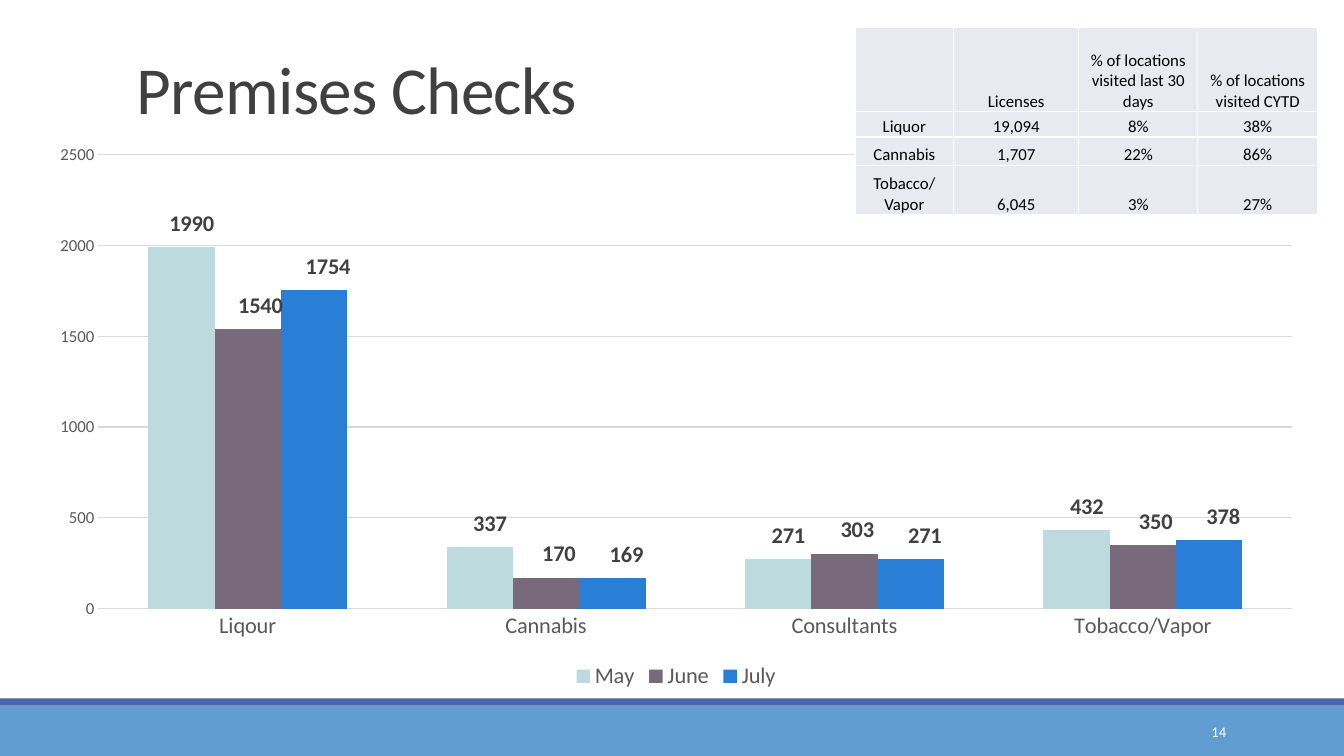
from dataclasses import dataclass
from typing import Any

from lxml.etree import SubElement, Element
from pptx import Presentation
from pptx.chart.data import CategoryChartData
from pptx.dml.color import RGBColor
from pptx.enum.chart import XL_CHART_TYPE as ChartType
from pptx.enum.chart import XL_LABEL_POSITION as LabelPosition
from pptx.enum.chart import XL_LEGEND_POSITION as LegendPosition
from pptx.enum.chart import XL_TICK_MARK as TickMark
from pptx.enum.shapes import MSO_SHAPE as Preset
from pptx.enum.text import MSO_ANCHOR as Anchor
from pptx.enum.text import PP_ALIGN as Align
from pptx.oxml.ns import qn
from pptx.util import Inches, Pt

FONT = "Calibri"
WHITE = RGBColor(0xFF, 0xFF, 0xFF)
BLACK = RGBColor(0x00, 0x00, 0x00)
DARK_GRAY = RGBColor(0x40, 0x40, 0x40)
MID_GRAY = RGBColor(0x59, 0x59, 0x59)
GRID_GRAY = RGBColor(0xD9, 0xD9, 0xD9)
FOOTER_BLUE = RGBColor(0x62, 0x9D, 0xD1)
STRIPE_BLUE = RGBColor(0x4A, 0x66, 0xAC)
CELL_FILL = RGBColor(0xE9, 0xEA, 0xF1)


@dataclass
class Area:
    left: float
    top: float
    width: float
    height: float

    def lengths(self) -> list[int]:
        return [Inches(n) for n in (self.left, self.top, self.width, self.height)]


@dataclass
class Band:
    area: Area
    color: RGBColor


@dataclass
class Label:
    text: str
    area: Area
    size: float
    color: RGBColor
    align: Align
    anchor: Anchor
    line_spacing: float = 1.0
    tracking: int = 0


@dataclass
class Month:
    name: str
    checks: tuple[int, ...]
    color: RGBColor
    label_shift: float


BANDS = [
    Band(Area(0, 7, 13.33, 0.5), FOOTER_BLUE),
    Band(Area(0, 6.93, 13.33, 0.07), STRIPE_BLUE),
]
TITLE = Label("Premises Checks", Area(1.26, 0.35, 11, 0.97), 48, DARK_GRAY,
              Align.LEFT, Anchor.BOTTOM, 0.85, -50)
PAGE_NUMBER = Label("14", Area(10.83, 7.06, 1.43, 0.4), 10.5, WHITE,
                    Align.RIGHT, Anchor.MIDDLE)
CATEGORIES = ["Liqour", "Cannabis", "Consultants", "Tobacco/Vapor"]
MONTHS = [
    Month("May", (1990, 337, 271, 432), RGBColor(0xBD, 0xDA, 0xDF), 0.008),
    Month("June", (1540, 170, 303, 350), RGBColor(0x78, 0x69, 0x7B), 0.01),
    Month("July", (1754, 169, 271, 378), RGBColor(0x29, 0x7F, 0xD5), 0.011),
]
LABEL_RISE = -0.01
LICENSE_ROWS = [
    ["", "Licenses", "% of locations visited last 30 days", "% of locations visited CYTD"],
    ["Liquor", "19,094", "8%", "38%"],
    ["Cannabis", "1,707", "22%", "86%"],
    ["Tobacco/\nVapor", "6,045", "3%", "27%"],
]
COLUMN_WIDTHS = [0.98, 1.24, 1.18, 1.19]
ROW_HEIGHTS = [0.84, 0.25, 0.28, 0.49]


def set_font(font: Any, size: float, color: RGBColor, bold: bool = False) -> None:
    for name, value in {"name": FONT, "size": Pt(size), "bold": bold}.items():
        setattr(font, name, value)
    font.color.rgb = color


def add_band(page: Any, band: Band) -> None:
    shape = page.shapes.add_shape(Preset.RECTANGLE, *band.area.lengths())
    shape.shadow.inherit = False
    shape.fill.solid()
    shape.fill.fore_color.rgb = band.color
    shape.line.fill.background()


def add_label(page: Any, label: Label) -> None:
    frame = page.shapes.add_textbox(*label.area.lengths()).text_frame
    frame.word_wrap = True
    frame.vertical_anchor = label.anchor
    para = frame.paragraphs[0]
    para.alignment = label.align
    para.line_spacing = label.line_spacing
    span = para.add_run()
    span.text = label.text
    set_font(span.font, label.size, label.color)
    if label.tracking:
        span.font._element.set("spc", str(label.tracking))


def manual_layout(**values: Any) -> Any:
    layout = Element(qn("c:layout"))
    manual = SubElement(layout, qn("c:manualLayout"))
    for name, value in values.items():
        SubElement(manual, qn(f"c:{name}")).set("val", str(value))
    return layout


def style_series(series: Any, month: Month) -> None:
    series.format.fill.solid()
    series.format.fill.fore_color.rgb = month.color
    for index in range(len(month.checks)):
        label = series.points[index].data_label
        set_font(label.font, 16, DARK_GRAY, bold=True)
        label.position = LabelPosition.OUTSIDE_END
    for element in series._element.iter(qn("c:dLbl")):
        element.insert(1, manual_layout(x=month.label_shift, y=LABEL_RISE))


def add_checks_chart(page: Any) -> None:
    data = CategoryChartData()
    data.categories = CATEGORIES
    for month in MONTHS:
        data.add_series(month.name, month.checks)
    chart = page.shapes.add_chart(
        ChartType.COLUMN_CLUSTERED, *Area(0.34, 1.33, 12.73, 5.56).lengths(), data).chart
    set_font(chart.font, 10, BLACK)
    chart.has_title = False
    chart.has_legend = True
    chart.legend.position = LegendPosition.BOTTOM
    chart.legend.include_in_layout = False
    set_font(chart.legend.font, 16, MID_GRAY)

    for axis, size in ((chart.category_axis, 16), (chart.value_axis, 12)):
        axis.major_tick_mark = axis.minor_tick_mark = TickMark.NONE
        axis.format.line.fill.background()
        set_font(axis.tick_labels.font, size, MID_GRAY)
    scale = chart.value_axis
    for name, value in {"minimum_scale": 0, "maximum_scale": 2500, "major_unit": 500}.items():
        setattr(scale, name, value)
    grid = scale.major_gridlines.format.line
    grid.color.rgb = GRID_GRAY
    grid.width = Pt(0.75)

    plot = chart.plots[0]
    plot.gap_width = 150
    plot.overlap = 0
    plot.vary_by_categories = False
    for series, month in zip(plot.series, MONTHS):
        style_series(series, month)

    plot_area = chart._chartSpace.chart.plotArea
    for old_layout in plot_area.findall(qn("c:layout")):
        plot_area.remove(old_layout)
    plot_area.insert(0, manual_layout(layoutTarget="inner", xMode="edge", yMode="edge",
                                      x=0.05, y=0.037, w=0.93, h=0.81))


def add_license_table(page: Any) -> None:
    area = Area(8.48, 0.27, sum(COLUMN_WIDTHS), sum(ROW_HEIGHTS))
    table = page.shapes.add_table(len(ROW_HEIGHTS), len(COLUMN_WIDTHS), *area.lengths()).table
    table.first_row = table.horz_banding = False
    for column, width in zip(table.columns, COLUMN_WIDTHS):
        column.width = Inches(width)
    margins = {"margin_left": 0.01, "margin_right": 0.01, "margin_top": 0.01, "margin_bottom": 0}
    for row, height, texts in zip(table.rows, ROW_HEIGHTS, LICENSE_ROWS):
        row.height = Inches(height)
        for cell, text in zip(row.cells, texts):
            cell.fill.solid()
            cell.fill.fore_color.rgb = CELL_FILL
            cell.vertical_anchor = Anchor.BOTTOM
            for name, value in margins.items():
                setattr(cell, name, Inches(value))
            cell.text = text
            for para in cell.text_frame.paragraphs:
                para.alignment = Align.CENTER
                for span in para.runs:
                    set_font(span.font, 12, BLACK)


def main() -> None:
    deck = Presentation()
    deck.slide_width, deck.slide_height = Inches(13.33), Inches(7.5)
    page = deck.slides.add_slide(deck.slide_layouts[6])
    for band in BANDS:
        add_band(page, band)
    add_label(page, TITLE)
    add_checks_chart(page)
    add_license_table(page)
    add_label(page, PAGE_NUMBER)
    deck.save("out.pptx")


if __name__ == "__main__":
    main()
